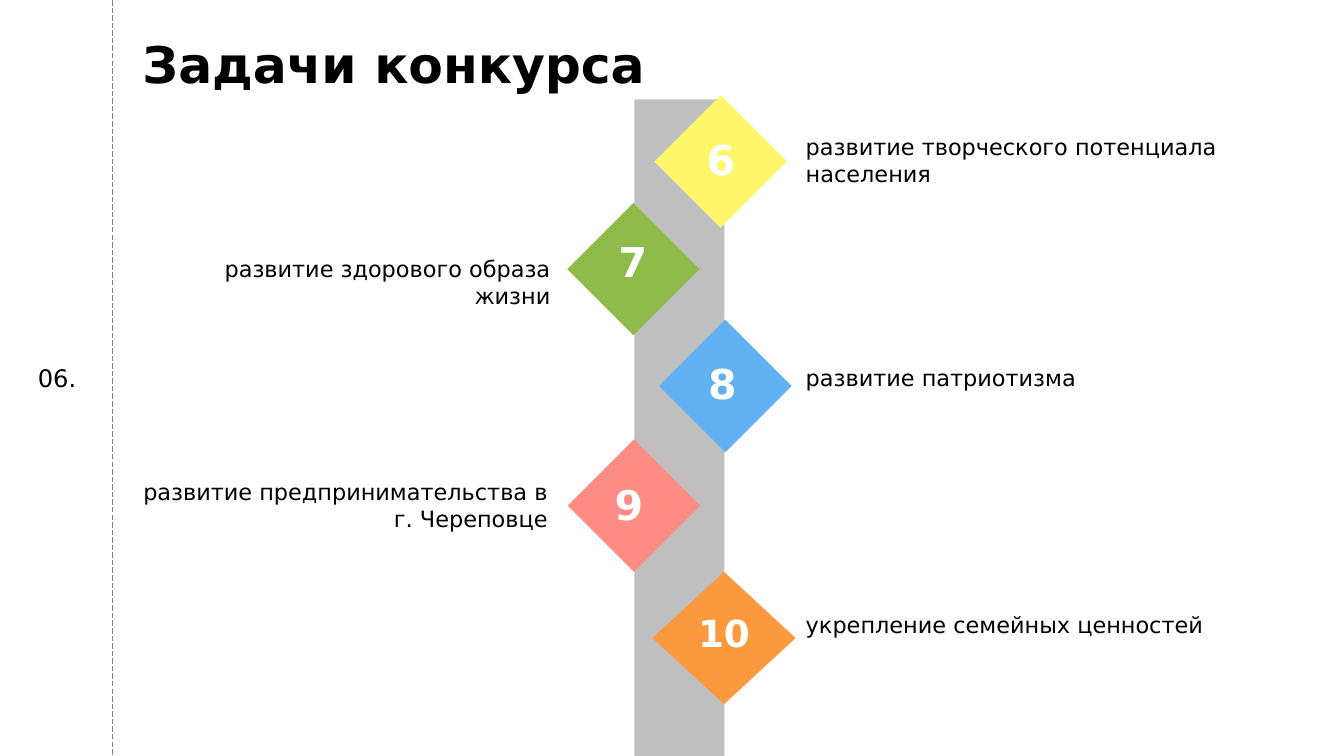
import pptx
import pptx.util
import pptx.dml.color
import pptx.enum.dml
import pptx.enum.shapes
import pptx.enum.text
import pptx.oxml.ns
from lxml import etree

Pt = pptx.util.Pt
RGBColor = pptx.dml.color.RGBColor
Align = pptx.enum.text.PP_ALIGN
Shape = pptx.enum.shapes.MSO_SHAPE

BLACK = RGBColor(0x00, 0x00, 0x00)
WHITE = RGBColor(0xFF, 0xFF, 0xFF)
DIVIDER_GRAY = RGBColor(0x80, 0x80, 0x80)
BAR_GRAY = RGBColor(0xBF, 0xBF, 0xBF)
YELLOW = RGBColor(0xFE, 0xF7, 0x6C)
GREEN = RGBColor(0x8F, 0xBB, 0x4A)
BLUE = RGBColor(0x60, 0xB0, 0xF2)
CORAL = RGBColor(0xFD, 0x8C, 0x84)
ORANGE = RGBColor(0xFB, 0x99, 0x3F)

FONT = "DejaVu Sans"
DIAMOND_SIZE = 141.84
NUMBER_WIDTH = 64.8
NUMBER_HEIGHT = 36.72
LINE_SPACING = 36.3

presentation = pptx.Presentation()
presentation.slide_width = Pt(1440)
presentation.slide_height = Pt(810)
slide = presentation.slides.add_slide(presentation.slide_layouts[6])
shapes = slide.shapes


def write(frame, text, size, color=BLACK, bold=False, align=Align.LEFT, spacing=None):
    frame.word_wrap = True
    frame.text = text
    paragraph = frame.paragraphs[0]
    paragraph.alignment = align
    if spacing:
        paragraph.line_spacing = Pt(spacing)
    font = paragraph.runs[0].font
    font.name = FONT
    font.size = Pt(size)
    font.bold = bold
    font.color.rgb = color


def add_text(left, top, width, height, text, size, **style):
    frame = shapes.add_textbox(Pt(left), Pt(top), Pt(width), Pt(height)).text_frame
    frame.margin_left = frame.margin_top = frame.margin_right = frame.margin_bottom = 0
    frame.auto_size = pptx.enum.text.MSO_AUTO_SIZE.SHAPE_TO_FIT_TEXT
    write(frame, text, size, **style)


add_text(28.8, 384.48, 64.8, 32.4, "06.", 25.9, align=Align.CENTER, spacing=LINE_SPACING)
add_text(152.64, 5.76, 750.24, 95.76, "Задачи конкурса", 54, bold=True, spacing=94.6)

divider = shapes.add_connector(
    pptx.enum.shapes.MSO_CONNECTOR.STRAIGHT, Pt(120.24), Pt(0), Pt(120.24), Pt(810))
divider.line.color.rgb = DIVIDER_GRAY
divider.line.width = Pt(0.75)
divider.line.dash_style = pptx.enum.dml.MSO_LINE.LONG_DASH
etree.SubElement(divider._element.spPr, pptx.oxml.ns.qn("a:effectLst"))

tasks = [
    (863.28, 142.56, 524.88, 58.32, "развитие творческого потенциала населения", Align.LEFT),
    (153.36, 273.6, 436.32, 28.8, "развитие здорового образа жизни", Align.RIGHT),
    (863.28, 390.24, 522, 28.8, "развитие патриотизма", Align.LEFT),
    (141.12, 511.92, 445.68, 58.32, "развитие предпринимательства в г. Череповце", Align.RIGHT),
    (863.28, 654.48, 576.72, 28.8, "укрепление семейных ценностей", Align.LEFT),
]
for left, top, width, height, task, align in tasks:
    add_text(left, top, width, height, task, 24, align=align)

bar = shapes.add_shape(Shape.RECTANGLE, Pt(679.68), Pt(106.56), Pt(96.48), Pt(703.44))
bar.shadow.inherit = False
bar.fill.solid()
bar.fill.fore_color.rgb = BAR_GRAY
bar.line.fill.background()

diamonds = [
    (701.28, 102.24, DIAMOND_SIZE, YELLOW),
    (607.68, 217.44, DIAMOND_SIZE, GREEN),
    (706.32, 342.72, DIAMOND_SIZE, BLUE),
    (608.4, 470.88, DIAMOND_SIZE, CORAL),
    (699.12, 612.72, 153.36, ORANGE),
]
for left, top, width, color in diamonds:
    diamond = shapes.add_shape(Shape.DIAMOND, Pt(left), Pt(top), Pt(width), Pt(DIAMOND_SIZE))
    diamond.shadow.inherit = False
    diamond.fill.solid()
    diamond.fill.fore_color.rgb = color
    diamond.line.fill.background()

last_diamond = diamond
last_diamond.text_frame.vertical_anchor = pptx.enum.text.MSO_ANCHOR.MIDDLE
write(last_diamond.text_frame, "10", 40, color=WHITE, bold=True,
      align=Align.CENTER, spacing=LINE_SPACING)

numbers = [
    (740.16, 160.56, "6"),
    (645.84, 270, "7"),
    (741.6, 400.32, "8"),
    (641.52, 529.92, "9"),
]
for left, top, number in numbers:
    add_text(left, top, NUMBER_WIDTH, NUMBER_HEIGHT, number, 44, color=WHITE, bold=True,
             align=Align.CENTER, spacing=LINE_SPACING)

presentation.save("out.pptx")
